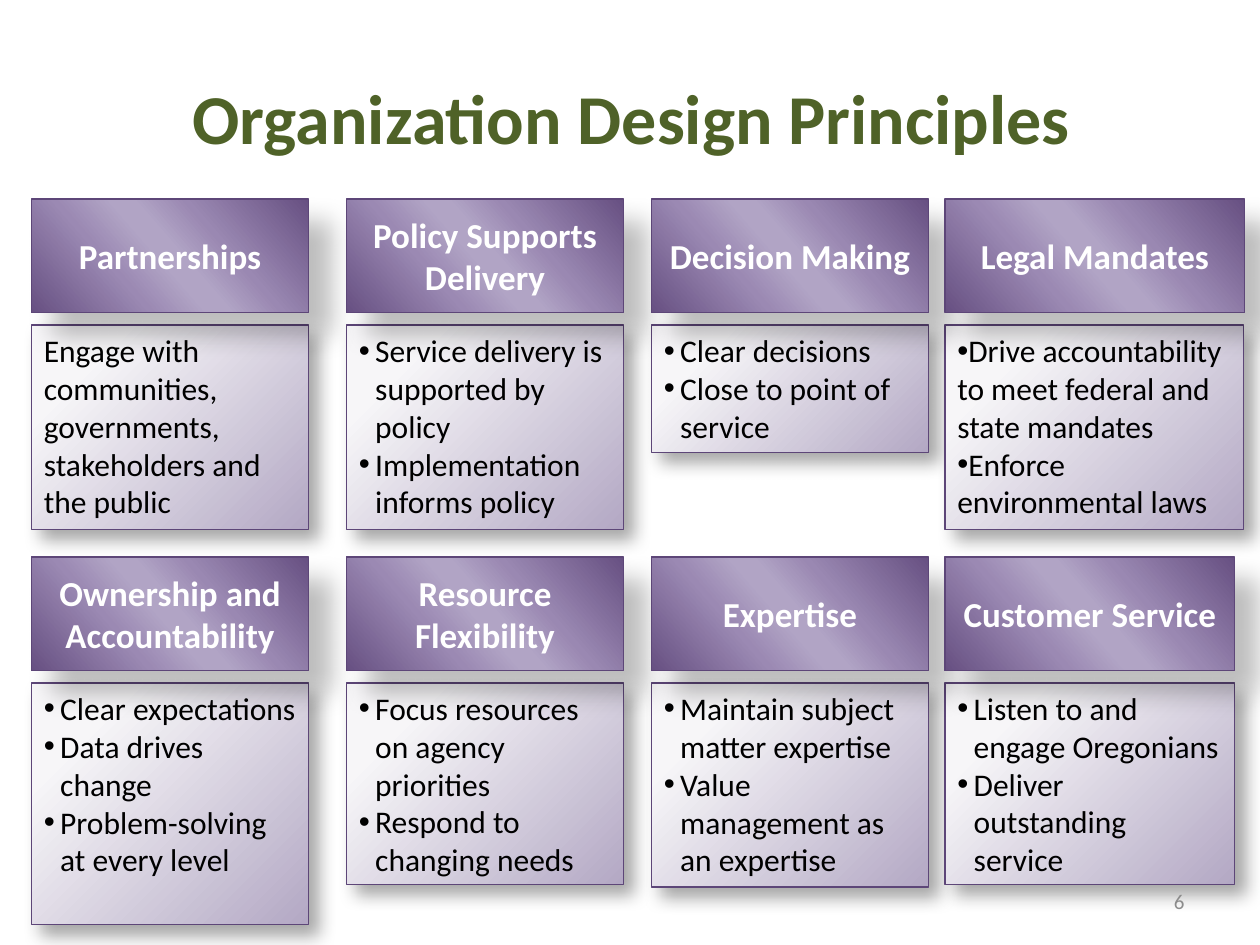
"""Build the organization design principles slide."""
from typing import NamedTuple

from lxml.etree import SubElement
from pptx import Presentation
from pptx.dml.color import RGBColor
from pptx.enum.shapes import MSO_SHAPE
from pptx.enum.text import MSO_ANCHOR, MSO_AUTO_SIZE, PP_ALIGN
from pptx.oxml import parse_xml
from pptx.oxml.ns import nsdecls, qn
from pptx.shapes.autoshape import Shape
from pptx.slide import Slide
from pptx.util import Emu, Pt

EMU_PER_PX = 9144
FONT = "Calibri"
GREEN = RGBColor(0x4F, 0x62, 0x28)
GRAY = RGBColor(0x8C, 0x8C, 0x8C)
BLACK = RGBColor(0x00, 0x00, 0x00)
WHITE = RGBColor(0xFF, 0xFF, 0xFF)
BORDER = RGBColor(0x5D, 0x46, 0x78)
PALE = RGBColor(0xF7, 0xF6, 0xF8)
LILAC = RGBColor(0xB3, 0xA8, 0xC4)
DARK_PURPLE = RGBColor(0x67, 0x50, 0x82)
MID_PURPLE = RGBColor(0x9A, 0x88, 0xB2)
LIGHT_PURPLE = RGBColor(0xB1, 0xA4, 0xC5)
SOFT_PURPLE = RGBColor(0x9B, 0x89, 0xB3)

COLUMNS = (25, 275, 517, 750)
ROWS = (158, 442)
HEADER_HEIGHT = 90
BODY_OFFSET = 100
HANGING_INDENT = 13


class Style(NamedTuple):
    stops: tuple[tuple[int, RGBColor], ...]
    direction: str
    shadow_alpha: int
    shadow_blur: float
    shadow_distance: float


class Principle(NamedTuple):
    row: int
    column: int
    heading: str
    points: tuple[str, ...]
    body_height: int
    header_width: int = 220
    body_width: int = 220
    bulleted: bool = True
    indent: int = HANGING_INDENT


HEADER_STYLE = Style(
    ((0, DARK_PURPLE), (33, MID_PURPLE), (47, LIGHT_PURPLE),
     (53, LIGHT_PURPLE), (68, SOFT_PURPLE), (100, DARK_PURPLE)),
    '<a:lin ang="8340000" scaled="1"/>', 26, 15, 18)
BODY_STYLE = Style(
    ((20, PALE), (100, LILAC)),
    '<a:path path="circle"><a:fillToRect l="-15000" t="-15000" r="115000" b="115000"/></a:path>',
    35, 10.2, 8)

PRINCIPLES = (
    Principle(0, 0, "Partnerships",
              ("Engage with communities, governments, stakeholders and the public",),
              162, bulleted=False),
    Principle(0, 1, "Policy Supports Delivery",
              ("Service delivery is supported by policy", "Implementation informs policy"), 162),
    Principle(0, 2, "Decision Making", ("Clear decisions", "Close to point of service"), 101),
    Principle(0, 3, "Legal Mandates",
              ("Drive accountability to meet federal and state mandates",
               "Enforce environmental laws"),
              162, header_width=238, body_width=237, indent=0),
    Principle(1, 0, "Ownership and Accountability",
              ("Clear expectations", "Data drives change", "Problem-solving at every level"), 192),
    Principle(1, 1, "Resource Flexibility",
              ("Focus resources on agency priorities", "Respond to changing needs"), 160),
    Principle(1, 2, "Expertise",
              ("Maintain subject matter expertise", "Value management as an expertise"), 162),
    Principle(1, 3, "Customer Service",
              ("Listen to and engage Oregonians", "Deliver outstanding service"),
              160, header_width=230, body_width=230),
)


def px(length: int) -> Emu:
    return Emu(length * EMU_PER_PX)


def write_text(shape: Shape, *lines: str, size: int, color: RGBColor, bold: bool = False,
               align: PP_ALIGN = PP_ALIGN.LEFT, anchor: MSO_ANCHOR = MSO_ANCHOR.MIDDLE,
               bulleted: bool = False, indent: int = 0) -> None:
    frame = shape.text_frame
    frame.word_wrap = True
    frame.vertical_anchor = anchor
    for index, line in enumerate(lines):
        paragraph = frame.add_paragraph() if index else frame.paragraphs[0]
        paragraph.alignment = align
        if bulleted:
            properties = paragraph._p.get_or_add_pPr()
            properties.set("marL", str(px(indent)))
            properties.set("indent", str(-px(indent)))
            SubElement(properties, qn("a:buFont")).set("typeface", "Arial")
            SubElement(properties, qn("a:buChar")).set("char", "•")
        run = paragraph.add_run()
        run.text = line
        run.font.name = FONT
        run.font.size = Pt(size)
        run.font.bold = bold
        run.font.color.rgb = color


def add_panel(slide: Slide, left: int, top: int, width: int, height: int, style: Style) -> Shape:
    shape = slide.shapes.add_shape(MSO_SHAPE.RECTANGLE, px(left), px(top), px(width), px(height))
    shape.line.color.rgb = BORDER
    shape.line.width = Pt(0.75)
    shape.shadow.inherit = False
    stops = "".join(f'<a:gs pos="{position * 1000}"><a:srgbClr val="{color}"/></a:gs>'
                    for position, color in style.stops)
    properties = shape._element.spPr
    properties.find(qn("a:prstGeom")).addnext(parse_xml(
        f'<a:gradFill {nsdecls("a")} rotWithShape="1"><a:gsLst>{stops}</a:gsLst>'
        f'{style.direction}</a:gradFill>'))
    properties.find(qn("a:effectLst")).append(parse_xml(
        f'<a:outerShdw {nsdecls("a")} blurRad="{Pt(style.shadow_blur)}" '
        f'dist="{Pt(style.shadow_distance)}" dir="2700000" algn="tl" rotWithShape="0">'
        f'<a:srgbClr val="{BLACK}"><a:alpha val="{style.shadow_alpha * 1000}"/></a:srgbClr>'
        f'</a:outerShdw>'))
    return shape


def add_body(slide: Slide, principle: Principle) -> None:
    shape = add_panel(slide, COLUMNS[principle.column], ROWS[principle.row] + BODY_OFFSET,
                      principle.body_width, principle.body_height, BODY_STYLE)
    write_text(shape, *principle.points, size=18, color=BLACK, anchor=MSO_ANCHOR.TOP,
               bulleted=principle.bulleted, indent=principle.indent)
    shape.text_frame.auto_size = MSO_AUTO_SIZE.SHAPE_TO_FIT_TEXT


def add_header(slide: Slide, principle: Principle) -> None:
    shape = add_panel(slide, COLUMNS[principle.column], ROWS[principle.row],
                      principle.header_width, HEADER_HEIGHT, HEADER_STYLE)
    write_text(shape, principle.heading, size=20, color=WHITE, bold=True, align=PP_ALIGN.CENTER)


def main() -> None:
    presentation = Presentation()
    presentation.slide_width, presentation.slide_height = px(1000), px(750)
    slide = presentation.slides.add_slide(presentation.slide_layouts[6])
    for principle in PRINCIPLES:
        add_body(slide, principle)
    title = slide.shapes.add_textbox(px(43), px(30), px(916), px(125))
    write_text(title, "Organization Design Principles", size=40, color=GREEN, bold=True,
               align=PP_ALIGN.CENTER)
    page_number = slide.shapes.add_textbox(px(717), px(695), px(233), px(40))
    write_text(page_number, "6", size=12, color=GRAY, align=PP_ALIGN.RIGHT)
    for principle in PRINCIPLES:
        add_header(slide, principle)
    presentation.save("out.pptx")


if __name__ == "__main__":
    main()
